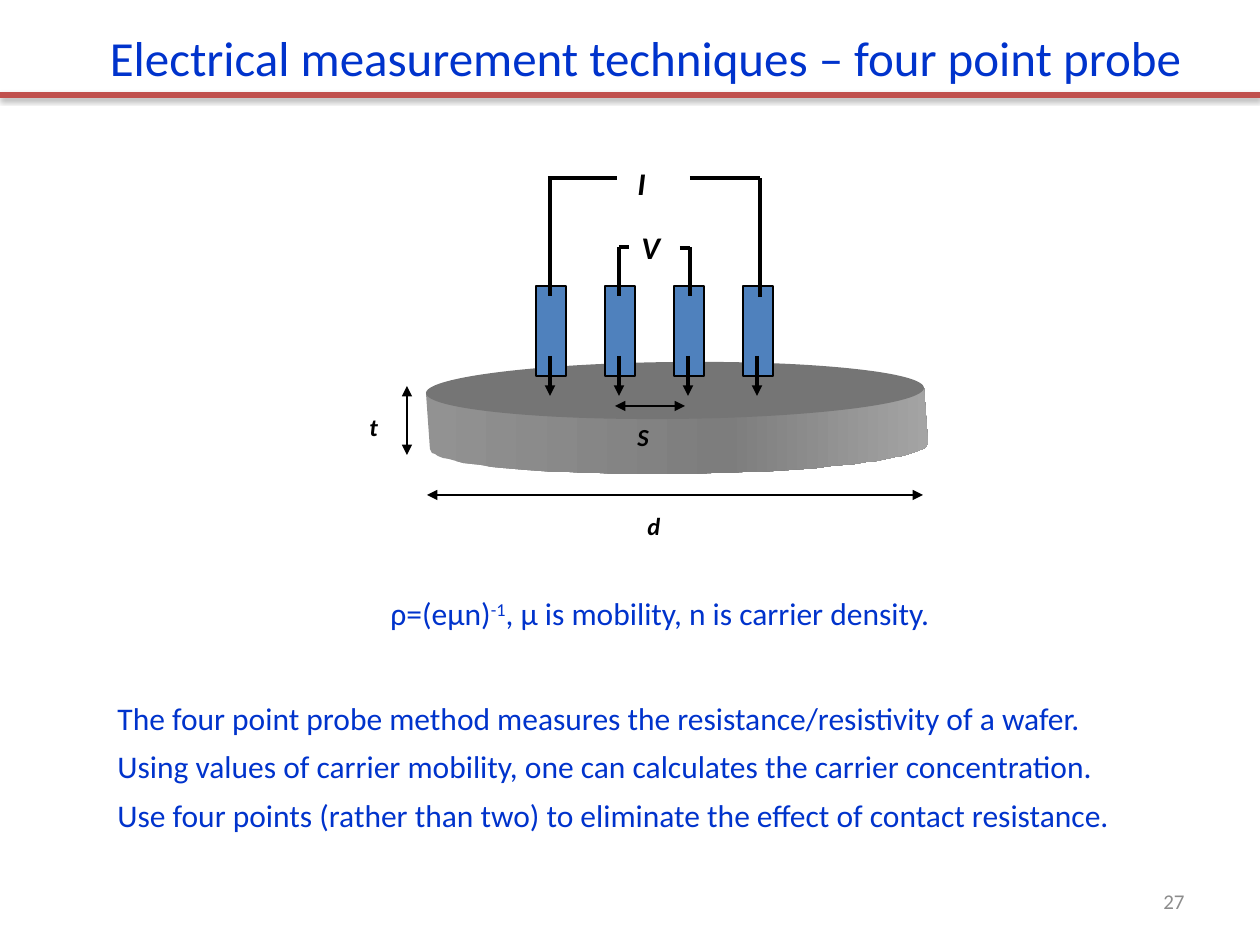
from copy import deepcopy
from dataclasses import dataclass
from math import cos, pi, sin

from lxml.etree import SubElement
from pptx import Presentation
from pptx.dml.color import RGBColor
from pptx.enum.shapes import MSO_CONNECTOR, MSO_SHAPE
from pptx.enum.text import MSO_ANCHOR, PP_ALIGN
from pptx.oxml.ns import qn
from pptx.util import Emu, Pt

BLACK = RGBColor(0x00, 0x00, 0x00)
BLUE = RGBColor(0x00, 0x33, 0xCC)
PROBE_BLUE = RGBColor(0x4F, 0x81, 0xBD)
RULE_RED = RGBColor(0xC0, 0x50, 0x4D)
NUMBER_GRAY = RGBColor(0x8C, 0x8C, 0x8C)
WAFER_TOP = RGBColor(0x75, 0x75, 0x75)
WAFER_LEFT = RGBColor(0x92, 0x92, 0x92)
WAFER_MIDDLE = RGBColor(0x7D, 0x7D, 0x7D)
WAFER_RIGHT = RGBColor(0xA4, 0xA4, 0xA4)

FONT = "Calibri"
EMU_PER_PX = 914400 / 126


@dataclass(frozen=True)
class Box:
    left: int
    top: int
    width: int
    height: int


@dataclass(frozen=True)
class Stroke:
    x1: int
    y1: int
    x2: int
    y2: int
    weight: float = 2
    heads: tuple[str, ...] = ()
    color: RGBColor = BLACK


@dataclass(frozen=True)
class Label:
    text: str
    left: int
    top: int
    size: int


PROBE_LEFT, PROBE_PITCH, PROBE_COUNT = 536, 69, 4
BOTH_ENDS = ("headEnd", "tailEnd")

LEADS = [
    Stroke(619, 296, 619, 247),
    Stroke(690, 296, 690, 247),
    Stroke(550, 296, 550, 178),
    Stroke(760, 297, 760, 178),
    Stroke(548, 178, 617, 178),
    Stroke(690, 178, 760, 178),
    Stroke(619, 247, 629, 247),
    Stroke(680, 248, 690, 248),
]
DIMENSIONS = [
    Stroke(615, 406, 685, 406, 0.75, BOTH_ENDS),
    Stroke(407, 386, 407, 455, 0.75, BOTH_ENDS),
    Stroke(427, 495, 923, 495, 0.75, BOTH_ENDS),
]
LABELS = [
    Label("V", 629, 222, 18),
    Label("I", 625, 158, 18),
    Label("S", 625, 416, 14),
    Label("t", 357, 406, 14),
    Label("d", 635, 505, 14),
]
FINDINGS = [
    "The four point probe method measures the resistance/resistivity of a wafer.",
    "Using values of carrier mobility, one can calculates the carrier concentration.",
    "Use four points (rather than two) to eliminate the effect of contact resistance.",
]


def px(length: float) -> Emu:
    return Emu(round(length * EMU_PER_PX))


def edges(box: Box) -> tuple[Emu, ...]:
    return px(box.left), px(box.top), px(box.width), px(box.height)


def set_font(paragraph, size: int, color: RGBColor) -> None:
    font = paragraph.font
    font.name, font.size = FONT, Pt(size)
    font.color.rgb = color


def add_text(slide, box: Box, lines: list[str], size: int, color: RGBColor = BLUE):
    frame = slide.shapes.add_textbox(*edges(box)).text_frame
    frame.word_wrap = True
    frame.text = "\n".join(lines)
    for paragraph in frame.paragraphs:
        set_font(paragraph, size, color)
    return frame


def add_stroke(slide, stroke: Stroke):
    connector = slide.shapes.add_connector(
        MSO_CONNECTOR.STRAIGHT,
        px(stroke.x1), px(stroke.y1), px(stroke.x2), px(stroke.y2),
    )
    connector.line.color.rgb = stroke.color
    connector.line.width = Pt(stroke.weight)
    outline = connector.line._get_or_add_ln()
    for head in stroke.heads:
        SubElement(outline, qn(f"a:{head}"), type="triangle")
    return SubElement(connector._element.spPr, qn("a:effectLst"))


def add_title(slide) -> None:
    title = slide.shapes.title
    title.left, title.top, title.width, title.height = edges(Box(94, 21, 1103, 72))
    frame = title.text_frame
    frame.text = "Electrical measurement techniques – four point probe"
    frame.vertical_anchor = MSO_ANCHOR.MIDDLE
    frame.paragraphs[0].alignment = PP_ALIGN.CENTER
    set_font(frame.paragraphs[0], 28, BLUE)


def add_rule(slide) -> None:
    effects = add_stroke(slide, Stroke(0, 95, 1260, 95, 3, color=RULE_RED))
    shadow = SubElement(
        effects, qn("a:outerShdw"),
        blurRad=str(Pt(3.1)), dist=str(Pt(1.6)), dir="5400000", rotWithShape="0",
    )
    shade = SubElement(shadow, qn("a:srgbClr"), val=str(BLACK))
    SubElement(shade, qn("a:alpha"), val="38000")


def add_wafer(slide) -> None:
    steps = 48
    angles = [pi * step / steps for step in range(steps + 1)]
    rim = [(679 + 249 * cos(a), 446 + 28 * sin(a) - 3 * cos(a)) for a in angles]
    builder = slide.shapes.build_freeform(924, 388, scale=EMU_PER_PX)
    builder.add_line_segments([*rim, (426, 393)], close=True)
    side = builder.convert_to_shape()
    side.fill.gradient()
    side.fill.gradient_angle = 0
    first_stop = side.fill.gradient_stops[0]._gs
    first_stop.addnext(deepcopy(first_stop))
    shades = [(0, WAFER_LEFT), (0.6, WAFER_MIDDLE), (1, WAFER_RIGHT)]
    for stop, (position, color) in zip(side.fill.gradient_stops, shades):
        stop.position = position
        stop.color.rgb = color
    top = slide.shapes.add_shape(MSO_SHAPE.OVAL, *edges(Box(426, 362, 498, 57)))
    top.rotation = -0.6
    top.fill.solid()
    top.fill.fore_color.rgb = WAFER_TOP
    for face in (side, top):
        face.line.fill.background()
        face.shadow.inherit = False


def add_probe(slide, left: int) -> None:
    body = slide.shapes.add_shape(MSO_SHAPE.RECTANGLE, *edges(Box(left, 286, 30, 90)))
    body.fill.solid()
    body.fill.fore_color.rgb = PROBE_BLUE
    body.line.color.rgb = BLACK
    body.line.width = Pt(0.75)
    body.shadow.inherit = False
    tip = left + 14
    add_stroke(slide, Stroke(tip, 356, tip, 396, heads=("tailEnd",)))


def add_label(slide, label: Label) -> None:
    box = Box(label.left, label.top, 49, 50 if label.size == 18 else 42)
    frame = add_text(slide, box, [label.text], label.size, BLACK)
    frame.paragraphs[0].font.bold = True
    frame.paragraphs[0].font.italic = True


def add_formula(slide) -> None:
    frame = add_text(slide, Box(378, 588, 576, 50), ["ρ=(eμn)"], 18)
    frame.word_wrap = False
    paragraph = frame.paragraphs[0]
    exponent = paragraph.add_run()
    exponent.text = "-1"
    exponent.font._element.set("baseline", "30000")
    paragraph.add_run().text = ", μ is mobility, n is carrier density."


def main() -> None:
    presentation = Presentation()
    presentation.slide_width, presentation.slide_height = px(1260), px(945)
    slide = presentation.slides.add_slide(presentation.slide_layouts[5])

    add_title(slide)
    findings = add_text(slide, Box(105, 693, 1050, 149), FINDINGS, 18)
    for paragraph in findings.paragraphs:
        paragraph.space_after = Pt(6)

    add_wafer(slide)
    for index in range(PROBE_COUNT):
        add_probe(slide, PROBE_LEFT + index * PROBE_PITCH)
    for stroke in LEADS + DIMENSIONS:
        add_stroke(slide, stroke)
    for label in LABELS:
        add_label(slide, label)

    add_rule(slide)
    add_formula(slide)
    number = add_text(slide, Box(903, 876, 294, 50), ["27"], 12, NUMBER_GRAY)
    number.vertical_anchor = MSO_ANCHOR.MIDDLE
    number.paragraphs[0].alignment = PP_ALIGN.RIGHT

    presentation.save("out.pptx")


if __name__ == "__main__":
    main()
